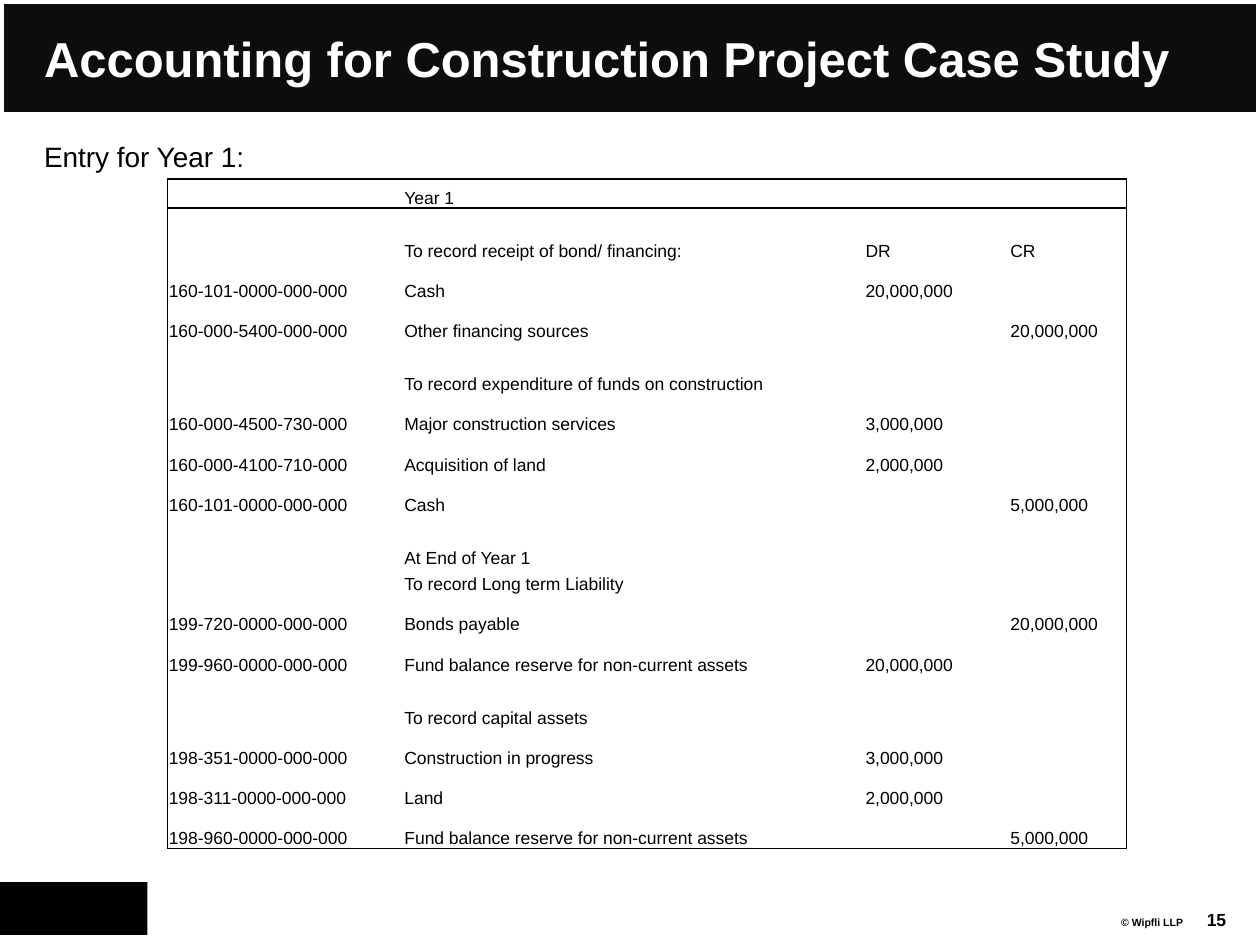
"""Build the construction project accounting slide."""
from dataclasses import dataclass

from lxml.etree import SubElement
from pptx import Presentation
from pptx.dml.color import RGBColor
from pptx.enum.shapes import MSO_SHAPE
from pptx.enum.text import MSO_ANCHOR as ANCHOR, PP_ALIGN as ALIGN
from pptx.oxml.ns import qn
from pptx.util import Inches, Pt

COLORS = {"ink": "000000", "bar": "0D0D0D", "paper": "FFFFFF"}
COL_WIDTHS = (1.87, 3.66, 1.15, 0.93)
HEADER_HEIGHT, TEXT_HEIGHT, ENTRY_HEIGHT = 0.23, 0.21, 0.32


@dataclass
class Row:
    account: str = ""
    label: str = ""
    debit: str = ""
    credit: str = ""

    @property
    def cells(self) -> tuple[str, ...]:
        return self.account, self.label, self.debit, self.credit


@dataclass
class Box:
    left: float
    top: float
    width: float
    height: float

    @property
    def emu(self) -> tuple[int, ...]:
        return tuple(map(Inches, (self.left, self.top, self.width, self.height)))


ROWS = [
    Row(label="Year 1"),
    Row(),
    Row("", "To record receipt of bond/ financing:", "DR", "CR"),
    Row("160-101-0000-000-000", "Cash", "20,000,000"),
    Row("160-000-5400-000-000", "Other financing sources", "", "20,000,000"),
    Row(),
    Row(label="To record expenditure of funds on construction"),
    Row("160-000-4500-730-000", "Major construction services", "3,000,000"),
    Row("160-000-4100-710-000", "Acquisition of land", "2,000,000"),
    Row("160-101-0000-000-000", "Cash", "", "5,000,000"),
    Row(),
    Row(label="At End of Year 1"),
    Row(label="To record Long term Liability"),
    Row("199-720-0000-000-000", "Bonds payable", "", "20,000,000"),
    Row("199-960-0000-000-000", "Fund balance reserve for non-current assets", "20,000,000"),
    Row(),
    Row(label="To record capital assets"),
    Row("198-351-0000-000-000", "Construction in progress", "3,000,000"),
    Row("198-311-0000-000-000", "Land", "2,000,000"),
    Row("198-960-0000-000-000", "Fund balance reserve for non-current assets", "", "5,000,000"),
]


def set_attrs(obj, values: dict) -> None:
    for name, value in values.items():
        setattr(obj, name, value)


def write(tf, text: str, size: float, color: str = "ink", bold: bool = False, **para):
    p = tf.paragraphs[0]
    set_attrs(p, para)
    r = p.add_run()
    r.text = text
    set_attrs(r.font, {"name": "Arial", "size": Pt(size), "bold": bold})
    r.font.color.rgb = RGBColor.from_string(COLORS[color])
    return p


def place(sp, box: Box) -> None:
    set_attrs(sp, dict(zip(("left", "top", "width", "height"), box.emu)))


def add_block(s, box: Box, color: str, outline: float = 0) -> None:
    sp = s.shapes.add_shape(MSO_SHAPE.RECTANGLE, *box.emu)
    sp.shadow.inherit = False
    sp.fill.solid()
    sp.fill.fore_color.rgb = RGBColor.from_string(COLORS[color])
    if outline:
        sp.line.color.rgb = RGBColor.from_string(COLORS["paper"])
        sp.line.width = Pt(outline)
    else:
        sp.line.fill.background()
    s.shapes._spTree.insert(2, sp._element)


def add_label(s, box: Box, text: str, size: float, align: ALIGN) -> None:
    tf = s.shapes.add_textbox(*box.emu).text_frame
    set_attrs(tf, {"word_wrap": True, "vertical_anchor": ANCHOR.MIDDLE})
    write(tf, text, size, bold=True, alignment=align)


def set_borders(cell, sides: dict[str, bool]) -> None:
    tc_pr = cell._tc.get_or_add_tcPr()
    for side, visible in sides.items():
        ln = SubElement(tc_pr, qn(f"a:ln{side}"), w=str(Pt(1)))
        if visible:
            fill = SubElement(ln, qn("a:solidFill"))
            SubElement(fill, qn("a:srgbClr"), val=COLORS["ink"])
        else:
            SubElement(ln, qn("a:noFill"))


def row_height(index: int, row: Row) -> float:
    if index == 0:
        return HEADER_HEIGHT
    return ENTRY_HEIGHT if row.account else TEXT_HEIGHT


def add_ledger(s, left: float, top: float) -> None:
    heights = [row_height(i, row) for i, row in enumerate(ROWS)]
    box = Box(left, top, sum(COL_WIDTHS), sum(heights))
    table = s.shapes.add_table(len(ROWS), len(COL_WIDTHS), *box.emu).table
    set_attrs(table, {"first_row": False, "horz_banding": False})
    for col, width in zip(table.columns, COL_WIDTHS):
        col.width = Inches(width)
    margins = {f"margin_{side}": Inches(0.01) for side in ("left", "right", "top")}
    last_row, last_col = len(ROWS) - 1, len(COL_WIDTHS) - 1
    for i, row in enumerate(ROWS):
        table.rows[i].height = Inches(heights[i])
        for j, text in enumerate(row.cells):
            cell = table.cell(i, j)
            set_attrs(cell, {**margins, "margin_bottom": 0, "vertical_anchor": ANCHOR.BOTTOM})
            set_borders(cell, {"L": j == 0, "R": j == last_col,
                               "T": i < 2, "B": i in (0, last_row)})
            cell.fill.background()
            if text:
                write(cell.text_frame, text, 10)
            else:
                SubElement(cell.text_frame.paragraphs[0]._p, qn("a:endParaRPr"), sz="1000")


def main() -> None:
    prs = Presentation()
    set_attrs(prs, {"slide_width": Inches(10), "slide_height": Inches(7.5)})
    s = prs.slides.add_slide(prs.slide_layouts[1])
    add_block(s, Box(0, 7, 1.17, 0.42), "ink")
    add_block(s, Box(0, 0, 10, 0.92), "bar", outline=4.5)

    title, body = s.placeholders
    place(title, Box(0.25, 0.17, 9.5, 0.58))
    title.text_frame.vertical_anchor = ANCHOR.MIDDLE
    write(title.text_frame, "Accounting for Construction Project Case Study", 28,
          "paper", True, alignment=ALIGN.LEFT)

    place(body, Box(0.25, 1.08, 9.5, 5.42))
    p = write(body.text_frame, "Entry for Year 1:", 16,
              line_spacing=0.95, space_before=Pt(0), space_after=Pt(8))
    p_pr = p._p.get_or_add_pPr()
    p_pr.set("marL", "0")
    p_pr.set("indent", "0")
    SubElement(p_pr, qn("a:buNone"))

    add_ledger(s, 1.33, 1.42)
    add_label(s, Box(8.8, 7.22, 0.7, 0.2), "© Wipfli LLP", 6, ALIGN.LEFT)
    add_label(s, Box(9.33, 7.17, 0.5, 0.25), "15", 10, ALIGN.RIGHT)
    prs.save("out.pptx")


if __name__ == "__main__":
    main()
